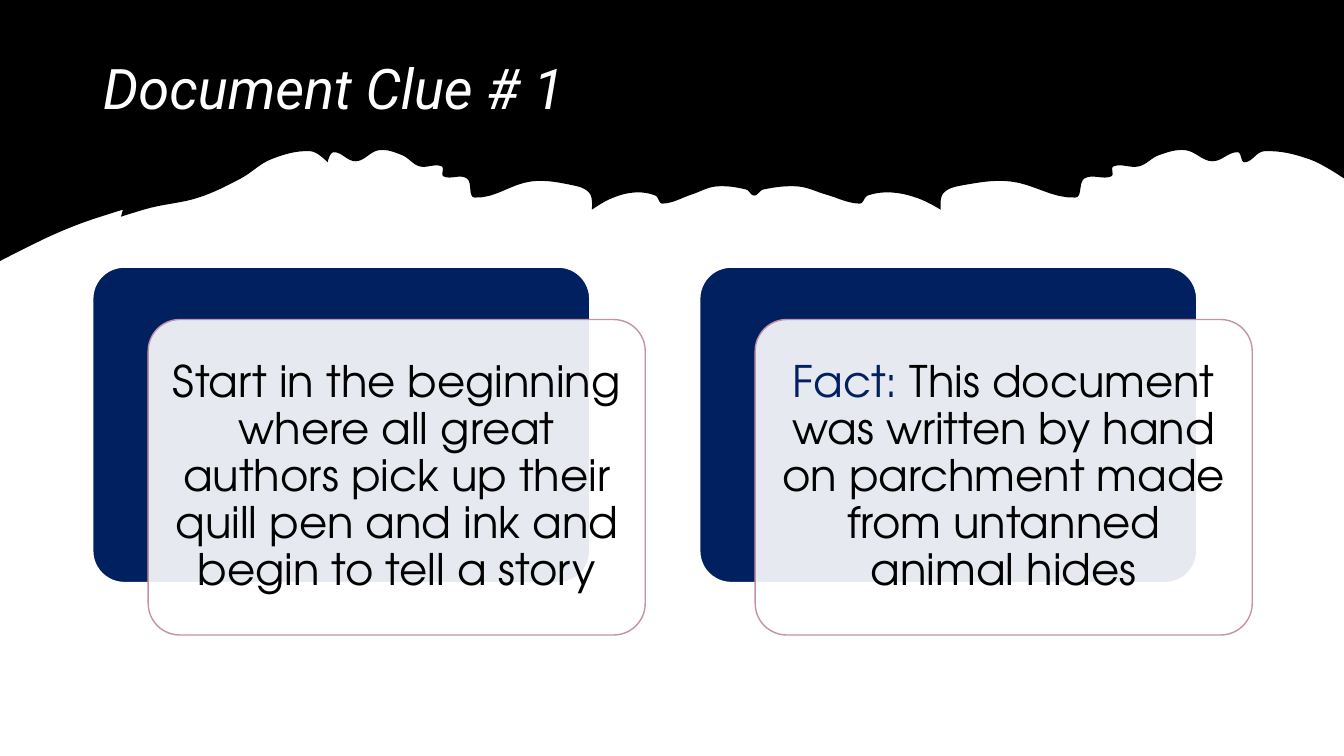
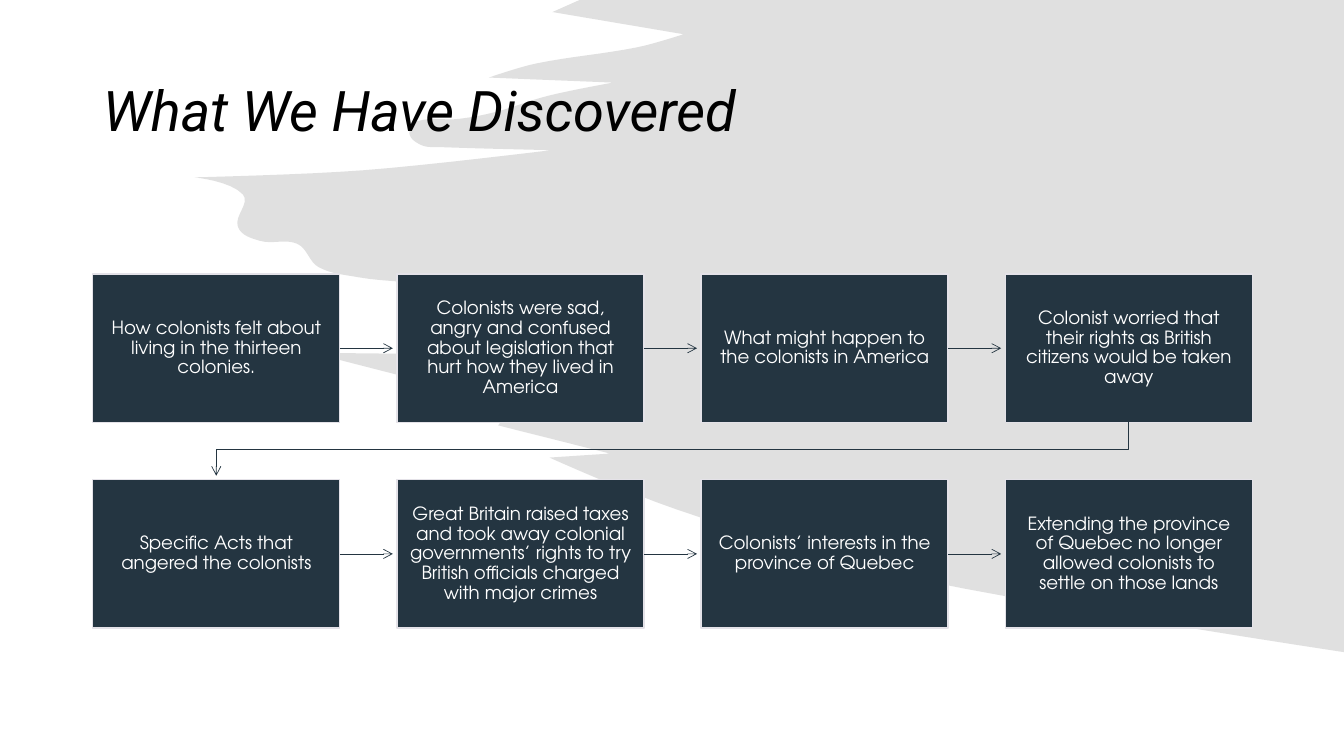
from math import dist
from lxml.etree import SubElement
from pptx import Presentation
from pptx.dml.color import RGBColor
from pptx.enum.shapes import MSO_CONNECTOR as LINK, MSO_SHAPE as SHAPE
from pptx.enum.text import MSO_ANCHOR as ANCHOR, MSO_AUTO_SIZE as AUTO, PP_ALIGN as ALIGN
from pptx.oxml.ns import qn
from pptx.util import Inches, Pt

COLORS = {
    "black": "000000", "white": "FFFFFF", "navy": "002060", "rose": "C492A4",
    "slate": "243541", "mist": "E4E2E8", "brush": "D9D9D9",
}
TITLE_FONT, BODY_FONT = "Roboto", "TeX Gyre Adventor"
SLIDE_W, SLIDE_H = 13.33, 7.5
LEFT, CONTENT_W, TITLE_TOP = 0.92, 11.5, 0.4

CLUE_TITLE = "Document Clue # 1"
CLUES = [
    [("Start in the beginning where all great authors pick up their quill pen and ink "
      "and begin to tell a story", "black")],
    [("Fact:", "navy"),
     (" This document was written by hand on parchment made from untanned animal hides", "black")],
]
FINDINGS_TITLE = "What We Have Discovered"
FINDINGS = [
    ["How colonists felt about living in the thirteen colonies.",
     "Colonists were sad, angry and confused about legislation that hurt how they lived in America",
     "What might happen to the colonists in America",
     "Colonist worried that their rights as British citizens would be taken away"],
    ["Specific Acts that angered the colonists",
     "Great Britain raised taxes and took away colonial governments’ rights to try "
     "British officials charged with major crimes",
     "Colonists’ interests in the province of Quebec",
     "Extending the province of Quebec no longer allowed colonists to settle on those lands"],
]

TEAR_SLOPE = [(0, 2.59), (0.46, 2.36), (0.82, 2.21), (1.22, 2.08), (1.2, 2.15), (1.5, 2.06), (1.97, 1.96)]
TEAR_HALF = [
    (2.39, 1.77), (2.69, 1.58), (3.08, 1.5), (3.25, 1.61), (3.31, 1.51), (3.53, 1.6),
    (3.76, 1.49), (3.99, 1.54), (4.16, 1.65), (4.38, 1.65), (4.4, 1.75), (4.63, 1.77),
    (4.71, 1.96), (5.27, 1.8), (5.69, 1.84), (5.85, 1.92), (5.87, 2.08), (6.06, 1.97),
    (6.29, 1.91), (6.5, 1.94), (6.57, 2.02), (6.86, 1.93), (7.1, 1.85), (7.4, 1.88),
]
TEAR_AXIS, TEAR_STRETCH = 7.48, 1.15
BRUSH_EDGE = [
    (5.75, 0), (5.48, 0.12), (6.78, 0.34), (6.32, 0.47), (5.32, 0.63), (4.85, 0.77),
    (6.08, 0.82), (5.44, 0.95), (4.92, 1.11), (4.55, 1.18), (4.15, 1.2), (4.06, 1.32),
    (4.18, 1.44), (4.37, 1.46), (5.47, 1.49), (3.6, 1.69), (1.93, 1.76), (2.41, 1.93),
    (2.36, 2.25), (2.58, 2.39), (2.95, 2.42), (3.16, 2.65), (3.55, 2.75), (4.42, 2.88),
    (4.55, 3.11), (4.66, 3.36), (4.89, 3.52), (3.09, 3.5), (5.12, 4.02), (4.94, 4.22),
    (6.05, 4.5), (5.45, 4.54), (6.7, 5.05), (8.92, 5.71), (SLIDE_W, 6.47),
]
CURVE_STEPS, HANDLE = 8, 0.35

CARD_W, CARD_H, CARD_TOP, CARD_PITCH = 4.93, 3.13, 2.65, 6.02
CARD_SHIFT_X, CARD_SHIFT_Y = 0.55, 0.52
STEP_W, STEP_H, STEP_TOP, STEP_ROW_PITCH = 2.45, 1.47, 2.72, 2.04
ARROW_CLEARANCE = 0.04


def rgb(name):
    return RGBColor.from_string(COLORS[name])


def paint(shape, fill, line=None, alpha=100):
    shape.shadow.inherit = False
    shape.fill.solid()
    shape.fill.fore_color.rgb = rgb(fill)
    if alpha < 100:
        color = shape._element.spPr.find(qn("a:solidFill"))[0]
        SubElement(color, qn("a:alpha")).set("val", str(alpha * 1000))
    if line:
        shape.line.color.rgb = rgb(line)
        shape.line.width = Pt(1)
    else:
        shape.line.fill.background()


def write(shape, spans, font=BODY_FONT, size=13, italic=False, align=ALIGN.CENTER, margins=None):
    frame = shape.text_frame
    frame.word_wrap = True
    frame.auto_size = AUTO.NONE
    frame.vertical_anchor = ANCHOR.MIDDLE
    if margins:
        frame.margin_left = frame.margin_right = Inches(margins[0])
        frame.margin_top = frame.margin_bottom = Inches(margins[1])
    para = frame.paragraphs[0]
    para.alignment = align
    para.line_spacing = 0.9
    for text, color in spans:
        span = para.add_run()
        span.text = text
        span.font.name = font
        span.font.size = Pt(size)
        span.font.italic = italic
        span.font.color.rgb = rgb(color)


def add_block(page, kind, left, top, width, height, **look):
    block = page.shapes.add_shape(kind, Inches(left), Inches(top), Inches(width), Inches(height))
    paint(block, **look)
    return block


def tangent(before, point, after):
    arriving = (point[0] - before[0], point[1] - before[1])
    leaving = (after[0] - point[0], after[1] - point[1])
    if arriving[0] * leaving[0] + arriving[1] * leaving[1] <= 0:
        return 0, 0
    span = dist(before, after)
    return (after[0] - before[0]) / span, (after[1] - before[1]) / span


def smooth(edge):
    inner = [tangent(*three) for three in zip(edge, edge[1:], edge[2:])]
    tangents = [(0, 0), *inner, (0, 0)]
    points = [edge[0]]
    for start, end, leaving, arriving in zip(edge, edge[1:], tangents, tangents[1:]):
        reach = HANDLE * dist(start, end)
        for step in range(1, CURVE_STEPS + 1):
            t = step / CURVE_STEPS
            u = 1 - t
            points.append(tuple(
                u ** 3 * a + 3 * u * u * t * (a + reach * p)
                + 3 * u * t * t * (b - reach * q) + t ** 3 * b
                for a, b, p, q in zip(start, end, leaving, arriving)))
    return points


def torn_outline():
    mirrored = [(TEAR_AXIS + TEAR_STRETCH * (TEAR_AXIS - x), y) for x, y in reversed(TEAR_HALF)]
    mirrored[-1] = (SLIDE_W, TEAR_HALF[0][1])
    edge = [*TEAR_SLOPE, *TEAR_HALF, (TEAR_AXIS, 1.94), *mirrored]
    return [*smooth(edge), (SLIDE_W, 0), (0, 0)]


def brush_outline():
    return [*smooth(BRUSH_EDGE), (SLIDE_W, 0)]


def add_page(deck, title, title_color, title_height, outline, **look):
    page = deck.slides.add_slide(deck.slide_layouts[5])
    start, *rest = [(Inches(x), Inches(y)) for x, y in outline]
    builder = page.shapes.build_freeform(*start)
    builder.add_line_segments(rest, close=True)
    backdrop = builder.convert_to_shape()
    paint(backdrop, **look)
    heading = page.shapes.title
    heading.left, heading.top = Inches(LEFT), Inches(TITLE_TOP)
    heading.width, heading.height = Inches(CONTENT_W), Inches(title_height)
    write(heading, [(title, title_color)], font=TITLE_FONT, size=40, italic=True, align=ALIGN.LEFT)
    backdrop._element.addnext(heading._element)
    return page


def add_arrow(page, kind, x0, y0, x1, y1):
    arrow = page.shapes.add_connector(kind, Inches(x0), Inches(y0), Inches(x1), Inches(y1))
    arrow.line.color.rgb = rgb("slate")
    arrow.line.width = Pt(0.5)
    SubElement(arrow.line._get_or_add_ln(), qn("a:tailEnd")).set("type", "arrow")
    SubElement(arrow._element.spPr, qn("a:effectLst"))
    return arrow


def add_down_elbow(page, x0, y0, x1, y1):
    center_x, center_y = (x0 + x1) / 2, (y0 + y1) / 2
    half_run, half_drop = (x0 - x1) / 2, (y1 - y0) / 2
    elbow = add_arrow(page, LINK.ELBOW, center_x - half_drop, center_y - half_run,
                      center_x + half_drop, center_y + half_run)
    elbow._element.spPr.find(qn("a:xfrm")).set("rot", str(90 * 60000))


def build_clue(deck):
    page = add_page(deck, CLUE_TITLE, "white", 1.02, torn_outline(), fill="black")
    for index, spans in enumerate(CLUES):
        left = LEFT + index * CARD_PITCH
        back = add_block(page, SHAPE.ROUNDED_RECTANGLE, left, CARD_TOP, CARD_W, CARD_H,
                         fill="navy", line="white")
        front = add_block(page, SHAPE.ROUNDED_RECTANGLE, left + CARD_SHIFT_X,
                          CARD_TOP + CARD_SHIFT_Y, CARD_W, CARD_H,
                          fill="white", line="rose", alpha=90)
        for card in (back, front):
            card.adjustments[0] = 0.1
        write(front, spans, size=31, margins=(0.13, 0.13))


def build_findings(deck):
    page = add_page(deck, FINDINGS_TITLE, "black", 1.45, brush_outline(), fill="brush", alpha=80)
    last = len(FINDINGS[0]) - 1
    pitch = (CONTENT_W - STEP_W) / last
    for row, steps in enumerate(FINDINGS):
        top = STEP_TOP + row * STEP_ROW_PITCH
        middle = top + STEP_H / 2
        for column, text in enumerate(steps):
            left = LEFT + column * pitch
            box = add_block(page, SHAPE.RECTANGLE, left, top, STEP_W, STEP_H,
                            fill="slate", line="mist")
            write(box, [(text, "white")], margins=(0.12, 0.13))
            if column < last:
                arrow = add_arrow(page, LINK.STRAIGHT, left + STEP_W, middle,
                                  left + pitch - ARROW_CLEARANCE, middle)
                arrow.begin_connect(box, 3)
    add_down_elbow(page, LEFT + last * pitch + STEP_W / 2, STEP_TOP + STEP_H,
                   LEFT + STEP_W / 2, STEP_TOP + STEP_ROW_PITCH - ARROW_CLEARANCE)


def main():
    deck = Presentation()
    deck.slide_width, deck.slide_height = Inches(SLIDE_W), Inches(SLIDE_H)
    build_clue(deck)
    build_findings(deck)
    deck.save("out.pptx")


if __name__ == "__main__":
    main()
